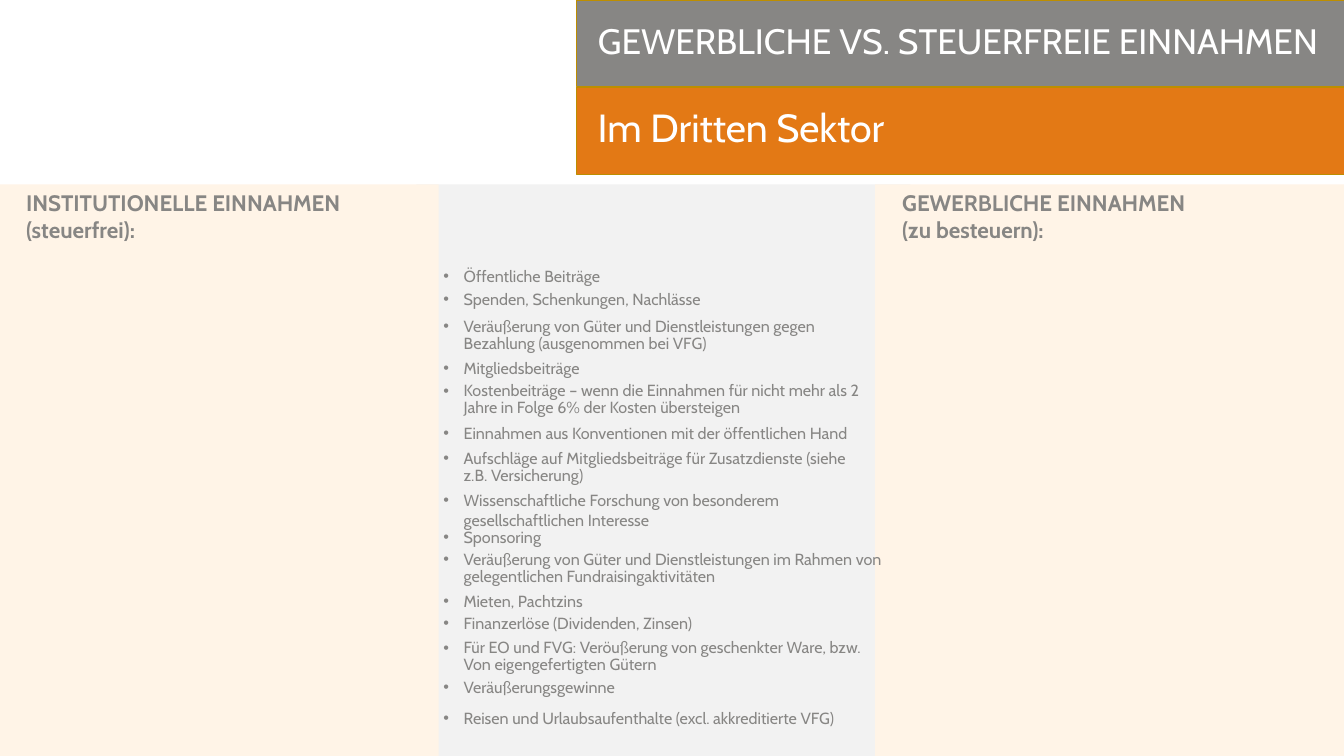
"""Build the slide on commercial versus tax-free income in the third sector."""
from lxml.etree import SubElement
from pptx import Presentation
from pptx.dml.color import RGBColor
from pptx.enum.shapes import MSO_SHAPE as Preset
from pptx.enum.text import MSO_ANCHOR as Anchor, MSO_AUTO_SIZE as AutoSize, PP_ALIGN as Align
from pptx.oxml.ns import qn
from pptx.util import Inches, Pt

FONT = "Cabin"
GREY = RGBColor(0x87, 0x86, 0x84)
ORANGE = RGBColor(0xE3, 0x79, 0x15)
GOLD = RGBColor(0xBD, 0x8E, 0x00)
CREAM = RGBColor(0xFF, 0xF4, 0xE7)
PALE_GREY = RGBColor(0xF2, 0xF2, 0xF2)
WHITE = RGBColor(0xFF, 0xFF, 0xFF)

PANEL_TOP, PANEL_HEIGHT = 1.83, 5.67
BAR_LEFT, BAR_WIDTH, BAR_HEIGHT = 5.72, 7.62, 0.86
LABEL_LEFT, LABEL_WIDTH, LABEL_HEIGHT = 5.83, 7.5, 0.7
ITEM_LEFT, ITEM_HEIGHT, ITEM_INDENT = 4.3, 0.16, 0.2
WIDE, NARROW = 4.58, 4.38
TIGHT = Pt(12)

# Each entry: vertical centre, box width, line spacing, wording.
ITEMS = [
    (2.74, WIDE, None, "Öffentliche Beiträge"),
    (2.97, WIDE, None, "Spenden, Schenkungen, Nachlässe"),
    (3.33, NARROW, TIGHT, "Veräußerung von Güter und Dienstleistungen gegen "
                          "Bezahlung (ausgenommen bei VFG)"),
    (3.65, WIDE, None, "Mitgliedsbeiträge"),
    (3.97, WIDE, TIGHT, "Kostenbeiträge – wenn die Einnahmen für nicht mehr als 2 "
                        "Jahre in Folge 6% der Kosten übersteigen"),
    (4.3, WIDE, None, "Einnahmen aus Konventionen mit der öffentlichen Hand"),
    (4.64, NARROW, TIGHT, "Aufschläge auf Mitgliedsbeiträge für Zusatzdienste (siehe "
                          "z.B. Versicherung)"),
    (5.06, WIDE, None, "Wissenschaftliche Forschung von besonderem "
                       "gesellschaftlichen Interesse"),
    (5.33, WIDE, None, "Sponsoring"),
    (5.64, WIDE, TIGHT, "Veräußerung von Güter und Dienstleistungen im Rahmen von "
                        "gelegentlichen Fundraisingaktivitäten"),
    (5.96, WIDE, None, "Mieten, Pachtzins"),
    (6.18, WIDE, None, "Finanzerlöse (Dividenden, Zinsen)"),
    (6.52, WIDE, TIGHT, "Für EO und FVG: Veröußerung von geschenkter Ware, bzw. "
                        "Von eigengefertigten Gütern"),
    (6.82, WIDE, None, "Veräußerungsgewinne"),
    (7.12, WIDE, None, "Reisen und Urlaubsaufenthalte (excl. akkreditierte VFG)"),
]


def add_block(shapes, left, top, width, height, fill, line=None):
    """Add a flat rectangle with an optional outline."""
    block = shapes.add_shape(Preset.RECTANGLE, Inches(left), Inches(top),
                             Inches(width), Inches(height))
    block.shadow.inherit = False
    block.fill.solid()
    block.fill.fore_color.rgb = fill
    if line is None:
        block.line.fill.background()
    else:
        block.line.color.rgb = line
        block.line.width = Pt(1)
    return block


def write(box, text, size, color, anchor=Anchor.MIDDLE, bold=False, spacing=None):
    """Write one left-aligned paragraph into a box and return it."""
    frame = box.text_frame
    frame.word_wrap = True
    frame.auto_size = AutoSize.NONE
    frame.vertical_anchor = anchor
    para = frame.paragraphs[0]
    para.alignment = Align.LEFT
    para.line_spacing = spacing
    span = para.add_run()
    span.text = text
    span.font.name = FONT
    span.font.size = Pt(size)
    span.font.bold = bold
    span.font.color.rgb = color
    return para


def place_title(page):
    """Move the title placeholder onto the grey bar and fill it."""
    title = page.shapes.title
    title.left, title.top = Inches(LABEL_LEFT), Inches(0.08)
    title.width, title.height = Inches(LABEL_WIDTH), Inches(LABEL_HEIGHT)
    write(title, "GEWERBLICHE VS. STEUERFREIE EINNAHMEN", 25.2, WHITE, spacing=0.85)
    page.shapes.element.append(title.element)


def add_subtitle(page):
    """Add the grouped orange bar with its label."""
    shapes = page.shapes.add_group_shape().shapes
    add_block(shapes, BAR_LEFT, 0.87, BAR_WIDTH, BAR_HEIGHT, ORANGE, GOLD)
    label = add_block(shapes, LABEL_LEFT, 0.95, LABEL_WIDTH, LABEL_HEIGHT, ORANGE)
    write(label, "Im Dritten Sektor", 28, WHITE, spacing=0.85)


def add_heading(page, left, width, text):
    """Add a bold column heading that grows with its text."""
    box = page.shapes.add_textbox(Inches(left), Inches(PANEL_TOP),
                                  Inches(width), Inches(0.64))
    write(box, text, 16, GREY, Anchor.TOP, bold=True)
    box.text_frame.auto_size = AutoSize.SHAPE_TO_FIT_TEXT


def add_item(page, middle, width, spacing, text):
    """Add one bulleted kind of income, centred on a height."""
    box = page.shapes.add_textbox(Inches(ITEM_LEFT), Inches(middle - ITEM_HEIGHT / 2),
                                  Inches(width), Inches(ITEM_HEIGHT))
    para = write(box, text, 11.5, GREY, spacing=spacing)
    settings = para._p.get_or_add_pPr()
    settings.set("marL", str(Inches(ITEM_INDENT)))
    settings.set("indent", str(-Inches(ITEM_INDENT)))
    SubElement(settings, qn("a:buFont"), typeface="Arial")
    SubElement(settings, qn("a:buChar"), char="•")


def main():
    """Build and save the deck."""
    deck = Presentation()
    deck.slide_width, deck.slide_height = Inches(13.33), Inches(7.5)
    page = deck.slides.add_slide(deck.slide_layouts[5])
    for left, width, fill in ((4.13, 4.9, PALE_GREY), (0, 4.35, CREAM), (8.68, 4.65, CREAM)):
        add_block(page.shapes, left, PANEL_TOP, width, PANEL_HEIGHT, fill)
    add_block(page.shapes, BAR_LEFT, 0, BAR_WIDTH, BAR_HEIGHT, GREY, GOLD)
    place_title(page)
    add_subtitle(page)
    add_heading(page, 0.16, 3.5, "INSTITUTIONELLE EINNAHMEN (steuerfrei):")
    add_heading(page, 8.85, 3.08, "GEWERBLICHE EINNAHMEN (zu besteuern):")
    for item in ITEMS:
        add_item(page, *item)
    deck.save("out.pptx")


if __name__ == "__main__":
    main()
